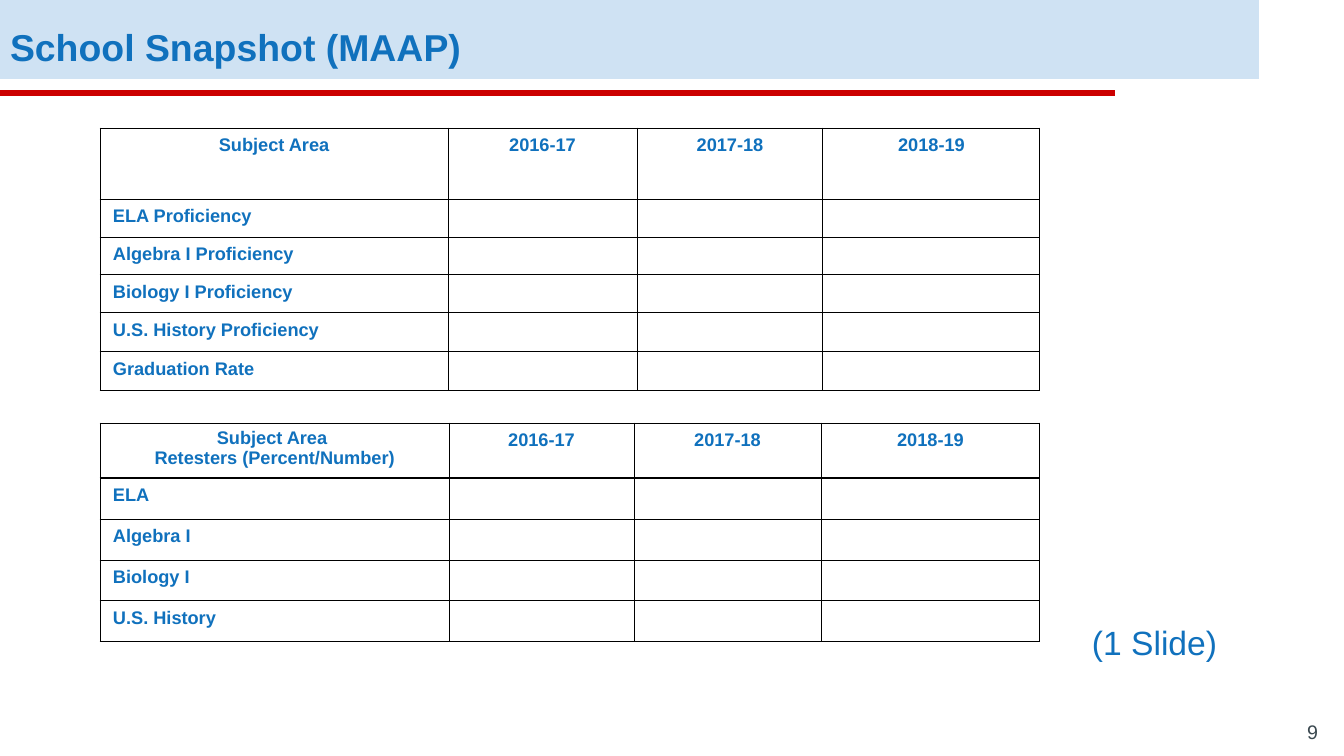
from lxml.etree import SubElement
from pptx import Presentation
from pptx.dml.color import RGBColor
from pptx.enum.shapes import MSO_SHAPE
from pptx.enum.text import MSO_ANCHOR, MSO_AUTO_SIZE, PP_ALIGN
from pptx.oxml.ns import qn
from pptx.util import Emu, Pt

EMU_PER_PX = 914400 / 100.8
SLIDE_WIDTH, SLIDE_HEIGHT = 1344, 756

BLUE = RGBColor(0x10, 0x71, 0xBD)
PALE_BLUE = RGBColor(0xCF, 0xE2, 0xF3)
RED = RGBColor(0xCC, 0x00, 0x00)
SLATE = RGBColor(0x3A, 0x48, 0x4F)
BLACK = RGBColor(0x00, 0x00, 0x00)

FONT = "Arial"
TABLE_TEXT_SIZE = 13
YEARS = ["2016-17", "2017-18", "2018-19"]


def px(length):
    return Emu(round(length * EMU_PER_PX))


def write_text(text_frame, text, *, size, color=BLUE, bold=False,
               align=PP_ALIGN.LEFT, anchor=MSO_ANCHOR.TOP, margins=(10, 5)):
    """Fill a frame, one paragraph per line; margins are (side, top and bottom)."""
    text_frame.word_wrap = True
    text_frame.auto_size = MSO_AUTO_SIZE.NONE
    text_frame.vertical_anchor = anchor
    text_frame.margin_left = text_frame.margin_right = px(margins[0])
    text_frame.margin_top = text_frame.margin_bottom = px(margins[1])
    text_frame.text = text
    for paragraph in text_frame.paragraphs:
        paragraph.alignment = align
        for run in paragraph.runs:
            run.font.name = FONT
            run.font.size = Pt(size)
            run.font.bold = bold
            run.font.color.rgb = color


def add_bar(slide, left, top, width, height, color):
    bar = slide.shapes.add_shape(
        MSO_SHAPE.RECTANGLE, px(left), px(top), px(width), px(height))
    bar.shadow.inherit = False
    bar.fill.solid()
    bar.fill.fore_color.rgb = color
    bar.line.fill.background()


def add_header(slide, left, top, width, height, title):
    add_bar(slide, left, top, width, height, PALE_BLUE)
    add_bar(slide, left, top + height + 11, width - 144, 6, RED)
    placeholder = slide.shapes.title
    placeholder.left, placeholder.top = px(left), px(top + 12)
    placeholder.width, placeholder.height = px(width), px(height - 9)
    write_text(placeholder.text_frame, title, size=26.7, bold=True,
               anchor=MSO_ANCHOR.MIDDLE)
    slide.shapes._spTree.append(placeholder._element)


def add_label(slide, left, top, width, height, text, **text_format):
    label = slide.shapes.add_textbox(px(left), px(top), px(width), px(height))
    write_text(label.text_frame, text, **text_format)


def set_borders(cell, line_widths):
    properties = cell._tc.get_or_add_tcPr()
    for side, width in line_widths.items():
        line = SubElement(properties, qn(f"a:ln{side}"), w=str(Pt(width)))
        fill = SubElement(line, qn("a:solidFill"))
        SubElement(fill, qn("a:srgbClr"), val=str(BLACK))


def format_cell(cell, text, is_header, line_widths):
    set_borders(cell, line_widths)
    cell.fill.background()
    cell.vertical_anchor = MSO_ANCHOR.TOP
    side, edge = (10, 5) if "\n" in text else (13, 7)
    cell.margin_left = cell.margin_right = px(side)
    cell.margin_top = cell.margin_bottom = px(edge)
    cell.text = text
    for paragraph in cell.text_frame.paragraphs:
        paragraph.alignment = PP_ALIGN.CENTER if is_header else PP_ALIGN.LEFT
        for run in paragraph.runs:
            run.font.name = FONT
            run.font.size = Pt(TABLE_TEXT_SIZE)
            run.font.bold = True
            run.font.color.rgb = BLUE
        if not paragraph.runs:
            SubElement(paragraph._p, qn("a:endParaRPr"), sz=str(TABLE_TEXT_SIZE * 100))


def add_score_table(slide, left, top, columns, rows, heading, subjects, rule=0.75):
    """Add a table of subjects by year; rule is the width of the line below its header."""
    frame = slide.shapes.add_table(
        len(rows), len(columns), px(left), px(top), px(sum(columns)), px(sum(rows)))
    table = frame.table
    table.first_row = table.horz_banding = False
    for column, width in zip(table.columns, columns):
        column.width = px(width)
    for row, height in zip(table.rows, rows):
        row.height = px(height)

    lines = [[heading, *YEARS]] + [[subject, "", "", ""] for subject in subjects]
    for row_index, line in enumerate(lines):
        line_widths = {"L": 0.75, "R": 0.75,
                       "T": rule if row_index == 1 else 0.75,
                       "B": rule if row_index == 0 else 0.75}
        for column_index, text in enumerate(line):
            format_cell(table.cell(row_index, column_index), text,
                        row_index == 0, line_widths)


def build_snapshot_slide(presentation):
    slide = presentation.slides.add_slide(presentation.slide_layouts[5])
    add_header(slide, 0, 0, 1259, 79, "School Snapshot (MAAP)")
    add_label(slide, 1247, 719, 81, 34, "9", size=14, color=SLATE,
              align=PP_ALIGN.RIGHT, anchor=MSO_ANCHOR.BOTTOM, margins=(10, 10))
    add_score_table(
        slide, 100, 128, [348, 189, 186, 217], [71, 38, 38, 38, 39, 39],
        "Subject Area",
        ["ELA Proficiency", "Algebra I Proficiency", "Biology I Proficiency",
         "U.S. History Proficiency", "Graduation Rate"])
    add_label(slide, 1082, 617, 235, 92, "(1 Slide)", size=24)
    add_score_table(
        slide, 100, 423, [349, 185, 187, 219], [55, 41, 41, 41, 41],
        "Subject Area \nRetesters (Percent/Number)",
        ["ELA", "Algebra I", "Biology I", "U.S. History"], rule=1.5)


def main():
    presentation = Presentation()
    presentation.slide_width = px(SLIDE_WIDTH)
    presentation.slide_height = px(SLIDE_HEIGHT)
    build_snapshot_slide(presentation)
    presentation.save("out.pptx")


if __name__ == "__main__":
    main()
